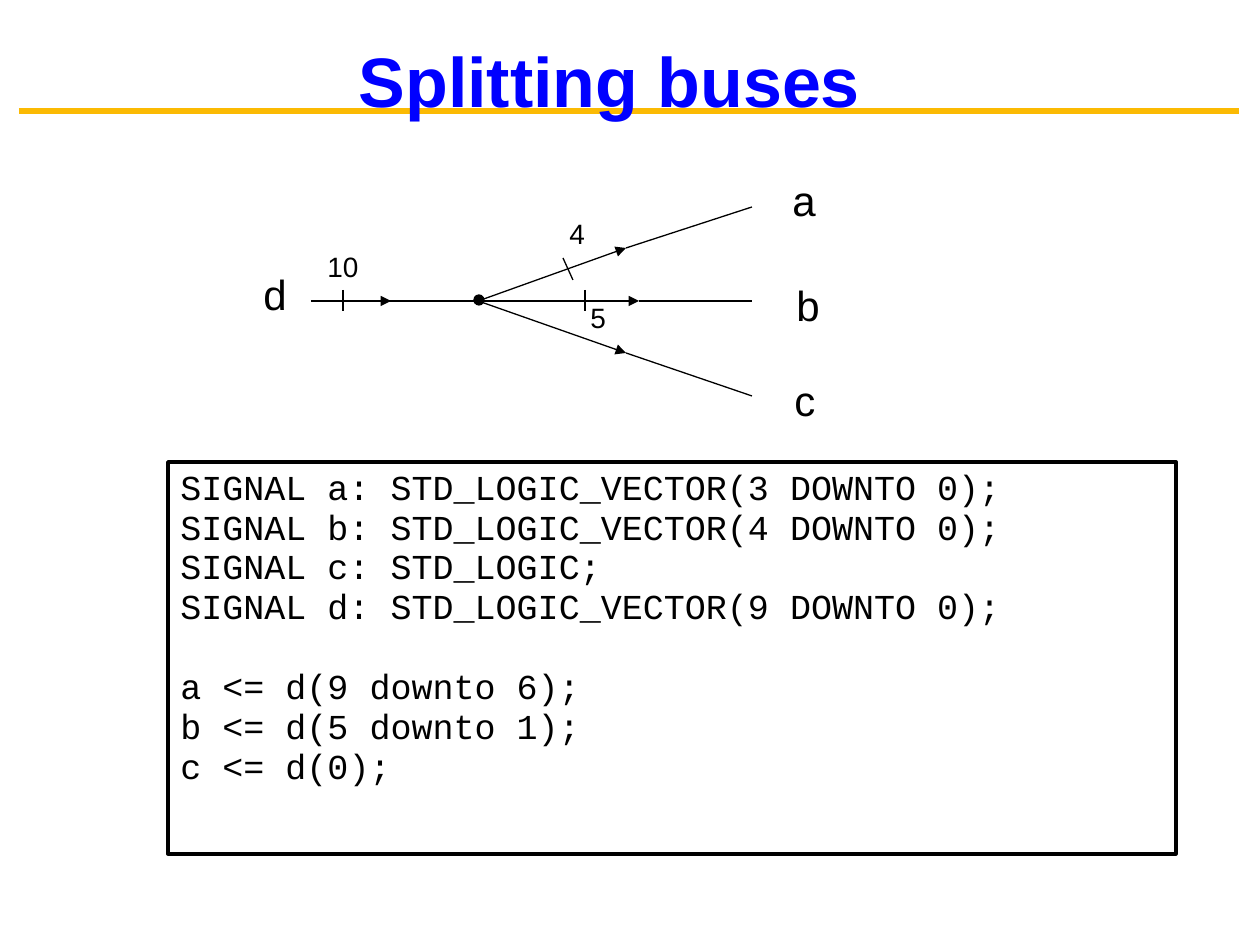
from lxml import etree
from pptx import Presentation
from pptx.dml.color import RGBColor
from pptx.enum.shapes import MSO_CONNECTOR, MSO_SHAPE
from pptx.enum.text import MSO_ANCHOR, MSO_AUTO_SIZE, PP_ALIGN
from pptx.oxml.ns import qn
from pptx.util import Pt

STRAIGHT = MSO_CONNECTOR.STRAIGHT
RECTANGLE, OVAL = MSO_SHAPE.RECTANGLE, MSO_SHAPE.OVAL
TOP, MIDDLE = MSO_ANCHOR.TOP, MSO_ANCHOR.MIDDLE
LEFT, CENTER = PP_ALIGN.LEFT, PP_ALIGN.CENTER
NO_AUTOFIT = MSO_AUTO_SIZE.NONE

EMU_PER_PX = 914400 // 126
COLORS = {"title": "0000FF", "rule": "FBBA03", "ink": "000000"}

DECLARATIONS = [
    "SIGNAL a: STD_LOGIC_VECTOR(3 DOWNTO 0);",
    "SIGNAL b: STD_LOGIC_VECTOR(4 DOWNTO 0);",
    "SIGNAL c: STD_LOGIC;",
    "SIGNAL d: STD_LOGIC_VECTOR(9 DOWNTO 0);",
]
ASSIGNMENTS = ["a <= d(9 downto 6);", "b <= d(5 downto 1);", "c <= d(0);"]

BUS_Y = 301
OUTPUT_X = 752
# Start of the bus, arrow tip, end of the bus
BUSES = [
    ((481, 300), (626, 248), (OUTPUT_X, 207)),
    ((389, BUS_Y), (639, BUS_Y), (OUTPUT_X, BUS_Y)),
    ((481, 302), (626, 353), (OUTPUT_X, 396)),
]
WIDTH_TICKS = [
    ((563, 258), (573, 280)),
    ((585, 290), (585, 311)),
    ((343, 290), (343, 311)),
]
WIDTH_LABELS = [("4", 557, 210), ("5", 578, 294), ("10", 315, 243)]
SIGNAL_LABELS = [("a", 780, 168), ("b", 784, 273), ("c", 782, 368), ("d", 251, 262)]


def px(*lengths):
    return [length * EMU_PER_PX for length in lengths]


def rgb(name):
    return RGBColor.from_string(COLORS[name])


def set_font(paragraph, name, size, color="ink", bold=False):
    font = paragraph.font
    font.name, font.size, font.bold = name, Pt(size), bold
    font.color.rgb = rgb(color)


def add_title(slide, text):
    title = slide.shapes.title
    title.left, title.top, title.width, title.height = px(32, 0, 1155, 158)
    title.text_frame.text = text
    title.text_frame.vertical_anchor = MIDDLE
    heading = title.text_frame.paragraphs[0]
    heading.alignment = CENTER
    set_font(heading, "Arial", 40, "title", bold=True)


def add_line(slide, start, end, color="ink", width=0.75, arrow=False):
    line = slide.shapes.add_connector(STRAIGHT, *px(*start, *end))
    line.line.color.rgb = rgb(color)
    line.line.width = Pt(width)
    if arrow:
        tip = etree.SubElement(line.line._get_or_add_ln(), qn("a:tailEnd"))
        tip.set("type", "triangle")
    etree.SubElement(line._element.spPr, qn("a:effectLst"))


def add_label(slide, text, left, top, size):
    label = slide.shapes.add_textbox(*px(left, top, 60, 3 * size))
    label.text_frame.word_wrap = True
    label.text_frame.text = text
    set_font(label.text_frame.paragraphs[0], "Arial", size)


def add_junction(slide, left, top, diameter):
    dot = slide.shapes.add_shape(OVAL, *px(left, top, diameter, diameter))
    dot.shadow.inherit = False
    dot.fill.solid()
    dot.fill.fore_color.rgb = rgb("ink")
    dot.line.color.rgb = rgb("ink")
    dot.line.width = Pt(0.75)


def add_code_box(slide, *groups):
    """Frame the code, with one line's height between groups."""
    box = slide.shapes.add_shape(RECTANGLE, *px(168, 462, 1008, 392))
    box.shadow.inherit = False
    box.fill.background()
    box.line.color.rgb = rgb("ink")
    box.line.width = Pt(2)
    frame = box.text_frame
    frame.word_wrap, frame.auto_size = True, NO_AUTOFIT
    frame.vertical_anchor = TOP
    frame.text = "\n".join(line for group in groups for line in group)
    for paragraph in frame.paragraphs:
        paragraph.alignment = LEFT
        paragraph.line_spacing = 0.95
        set_font(paragraph, "Courier New", 20)
    group_start = 0
    for group in groups[:-1]:
        group_start += len(group)
        frame.paragraphs[group_start].space_before = Pt(22.5)


def add_bus_diagram(slide):
    add_line(slide, (311, BUS_Y), (391, BUS_Y), arrow=True)
    for start, tip, end in BUSES:
        add_line(slide, start, tip, arrow=True)
        add_line(slide, tip, end)
    add_junction(slide, 474, 295, 10)
    for start, end in WIDTH_TICKS:
        add_line(slide, start, end)
    for text, left, top in WIDTH_LABELS:
        add_label(slide, text, left, top, 16)
    for text, left, top in SIGNAL_LABELS:
        add_label(slide, text, left, top, 24)


def main():
    presentation = Presentation()
    presentation.slide_width, presentation.slide_height = px(1260, 945)
    slide = presentation.slides.add_slide(presentation.slide_layouts[5])
    add_line(slide, (19, 111), (1239, 111), "rule", 3.75)
    add_title(slide, "Splitting buses")
    # The title stands in front of the rule.
    slide.shapes._spTree.append(slide.shapes.title._element)
    add_code_box(slide, DECLARATIONS, ASSIGNMENTS)
    add_bus_diagram(slide)
    presentation.save("out.pptx")


if __name__ == "__main__":
    main()
